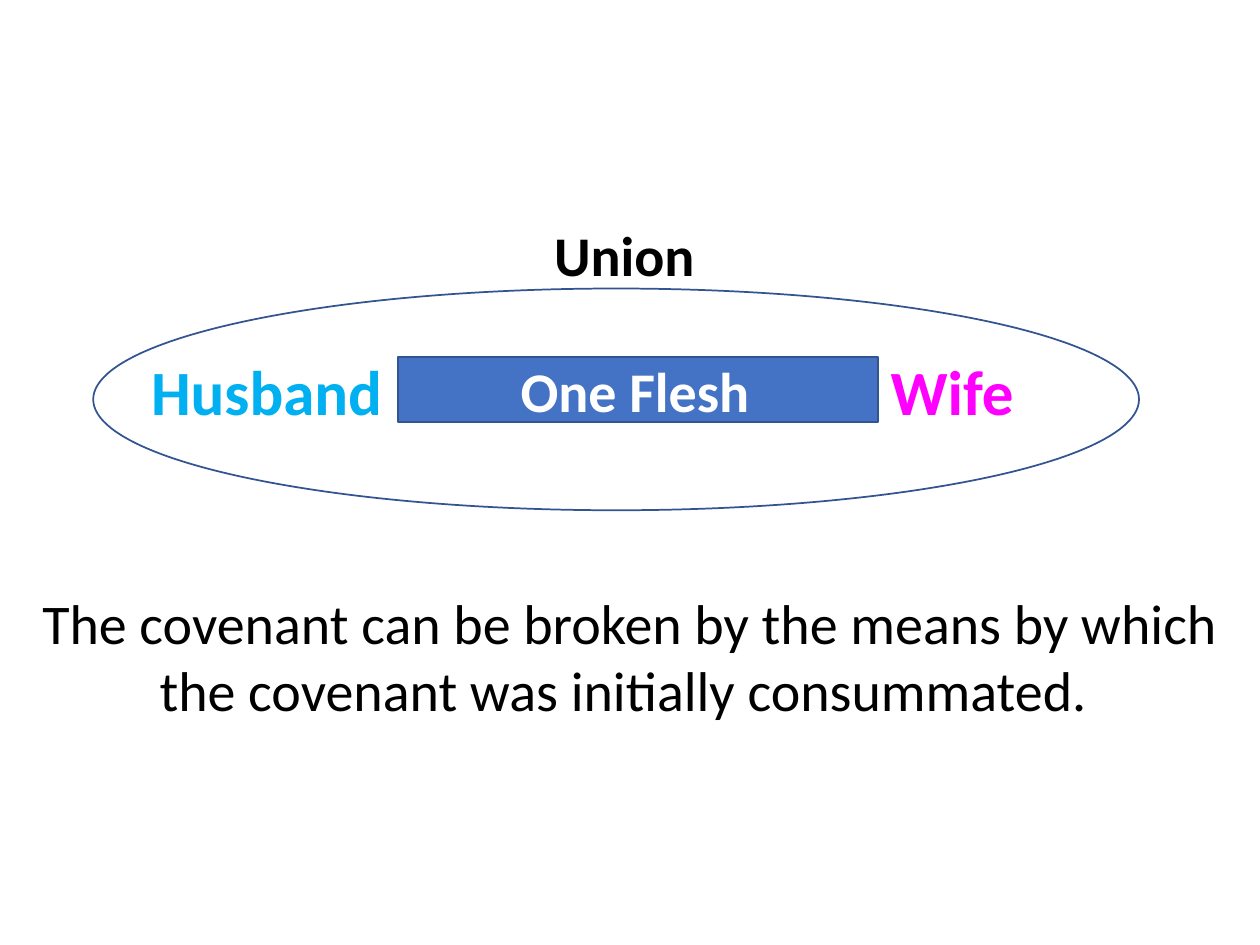
from dataclasses import dataclass
from typing import Optional

import pptx
import pptx.dml.color
import pptx.enum.shapes
import pptx.enum.text
import pptx.util

Pt = pptx.util.Pt
Align = pptx.enum.text.PP_ALIGN
Preset = pptx.enum.shapes.MSO_SHAPE

COLORS = {
    "black": "000000",
    "white": "FFFFFF",
    "husband": "00B0F0",
    "wife": "FF00FF",
    "bar": "4472C4",
    "outline": "325491",
}


@dataclass
class Box:
    left: float
    top: float
    width: float
    height: float

    def lengths(self) -> tuple:
        return Pt(self.left), Pt(self.top), Pt(self.width), Pt(self.height)


@dataclass
class Label:
    text: str
    box: Box
    color: str = "black"
    size: float = 32
    bold: bool = True
    align: Align = Align.CENTER


@dataclass
class Figure:
    preset: Preset
    box: Box
    fill: Optional[str] = None


def color(name: str) -> pptx.dml.color.RGBColor:
    return pptx.dml.color.RGBColor.from_string(COLORS[name])


def draw_label(slide: pptx.slide.Slide, label: Label) -> None:
    text_frame = slide.shapes.add_textbox(*label.box.lengths()).text_frame
    text_frame.word_wrap = True
    text_frame.auto_size = pptx.enum.text.MSO_AUTO_SIZE.SHAPE_TO_FIT_TEXT
    paragraph = text_frame.paragraphs[0]
    paragraph.text = label.text
    paragraph.alignment = label.align
    paragraph.font.name = "Calibri"
    paragraph.font.size = Pt(label.size)
    paragraph.font.bold = label.bold
    paragraph.font.color.rgb = color(label.color)


def draw_figure(slide: pptx.slide.Slide, figure: Figure) -> None:
    shape = slide.shapes.add_shape(figure.preset, *figure.box.lengths())
    shape.shadow.inherit = False
    if figure.fill:
        shape.fill.solid()
        shape.fill.fore_color.rgb = color(figure.fill)
    else:
        shape.fill.background()
    shape.line.color.rgb = color("outline")
    shape.line.width = Pt(1)


FIGURES = [
    Figure(Preset.RECTANGLE, Box(227.5, 203.8, 274.3, 37.4), "bar"),
    Figure(Preset.OVAL, Box(53.3, 164.9, 597.6, 126.7)),
]
LABELS = [
    Label("Husband", Box(79.2, 198, 164.9, 51.1), "husband", 36, align=Align.LEFT),
    Label("Wife", Box(501.8, 198, 164.9, 51.1), "wife", 36, align=Align.LEFT),
    Label("One Flesh", Box(247, 200.2, 231.8, 46.1), "white"),
    Label(
        "The covenant can be broken by the means by which "
        "the covenant was initially consummated. ",
        Box(0, 332.6, 720, 85),
        bold=False,
    ),
    Label("Union", Box(211.7, 122.4, 290.2, 46.1)),
]


def main() -> None:
    presentation = pptx.Presentation()
    presentation.slide_width = Pt(720)
    presentation.slide_height = Pt(540)
    slide = presentation.slides.add_slide(presentation.slide_layouts[6])
    for figure in FIGURES:
        draw_figure(slide, figure)
    for label in LABELS:
        draw_label(slide, label)
    presentation.save("out.pptx")


if __name__ == "__main__":
    main()
